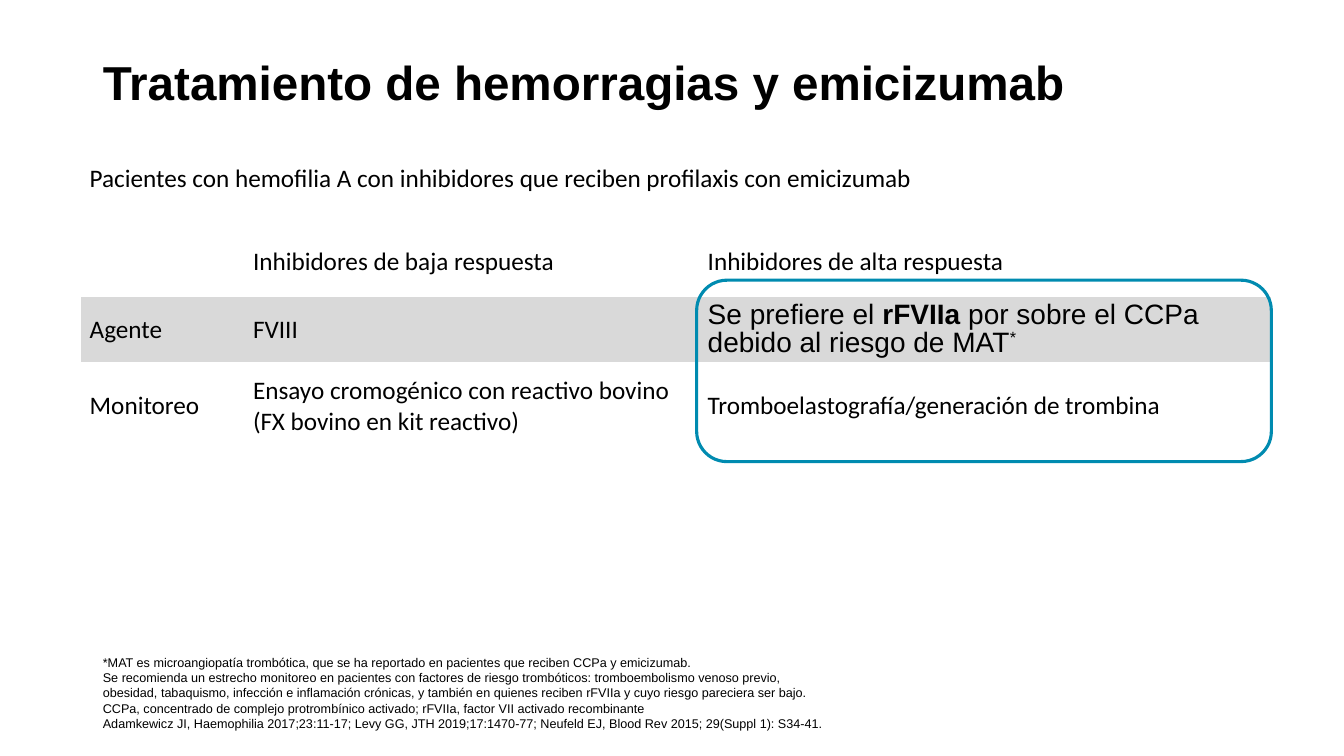
from lxml.etree import SubElement
from pptx import Presentation
from pptx.dml.color import RGBColor
from pptx.enum.shapes import MSO_SHAPE
from pptx.enum.text import MSO_ANCHOR, MSO_AUTO_SIZE, PP_ALIGN
from pptx.oxml.ns import qn
from pptx.util import Pt

PX = 9144
BLACK = RGBColor(0x00, 0x00, 0x00)
WHITE = RGBColor(0xFF, 0xFF, 0xFF)
GREY = RGBColor(0xD9, 0xD9, 0xD9)
TEAL = RGBColor(0x00, 0x8B, 0xB0)
PLAIN_GRID = "{2D5ABB26-0587-4C30-8999-92F81FD0307C}"

TITLE = "Tratamiento de hemorragias y emicizumab"
HEAD = "Pacientes con hemofilia A con inhibidores que reciben profilaxis con emicizumab"
AGENT = [
    ("Se prefiere el ", False, False),
    ("rFVIIa", True, False),
    (" por sobre el CCPa debido al riesgo de MAT", False, False),
    ("*", False, True),
]
ROWS = [
    (85, WHITE, [(HEAD, BLACK, True)]),
    (70, WHITE, [
        ("", BLACK, True),
        ("Inhibidores de baja respuesta", BLACK, True),
        ("Inhibidores de alta respuesta", BLACK, True),
    ]),
    (64, GREY, [
        ("Agente", TEAL, True),
        ("FVIII", BLACK, True),
        (AGENT, BLACK, False),
    ]),
    (88, WHITE, [
        ("Monitoreo", TEAL, True),
        ("Ensayo cromogénico con reactivo bovino (FX bovino en kit reactivo)", BLACK, False),
        ("Tromboelastografía/generación de trombina", BLACK, False),
    ]),
]
WIDTHS = [162, 451, 568]
NOTES = [
    "*MAT es microangiopatía trombótica, que se ha reportado en pacientes que reciben CCPa y emicizumab.",
    "Se recomienda un estrecho monitoreo en pacientes con factores de riesgo trombóticos: "
    "tromboembolismo venoso previo, obesidad, tabaquismo, infección e inflamación crónicas, "
    "y también en quienes reciben rFVIIa y cuyo riesgo pareciera ser bajo.",
    "CCPa, concentrado de complejo protrombínico activado; rFVIIa, factor VII activado recombinante",
    "Adamkewicz JI, Haemophilia 2017;23:11-17; Levy GG, JTH 2019;17:1470-77; "
    "Neufeld EJ, Blood Rev 2015; 29(Suppl 1): S34-41.",
]


def place(shape, *box):
    """Move and size a shape in px."""
    shape.left, shape.top, shape.width, shape.height = (n * PX for n in box)


def style(font, size, color=BLACK, bold=False):
    """Format one font."""
    font.name, font.size, font.bold = "Arial", Pt(size), bold
    font.color.rgb = color


def add_title(slide):
    """Fill the title placeholder."""
    title = slide.shapes.title
    place(title, 92, 25, 1150, 119)
    frame = title.text_frame
    frame.text = TITLE
    frame.auto_size = MSO_AUTO_SIZE.NONE
    frame.vertical_anchor = MSO_ANCHOR.MIDDLE
    line = frame.paragraphs[0]
    line.alignment, line.line_spacing = PP_ALIGN.LEFT, 0.9
    style(line.font, 34, bold=True)


def add_notes(slide):
    """Fill the body placeholder with the footnotes."""
    body = slide.placeholders[1]
    place(body, 92, 627, 741, 98)
    frame = body.text_frame
    frame.text = "\n".join(NOTES)
    frame.auto_size = MSO_AUTO_SIZE.NONE
    frame.vertical_anchor = MSO_ANCHOR.BOTTOM
    frame.margin_bottom = 0
    for line in frame.paragraphs:
        line.space_before = Pt(0)
        props = line._p.get_or_add_pPr()
        props.set("marL", "0")
        props.set("indent", "0")
        SubElement(props, qn("a:buNone"))
        style(line.font, 9)


def fill_cell(cell, text, color, bold, fill):
    """Write one table cell, from a string or a list of runs."""
    cell.fill.solid()
    cell.fill.fore_color.rgb = fill
    cell.vertical_anchor = MSO_ANCHOR.MIDDLE
    cell.margin_left = cell.margin_right = 9 * PX
    cell.margin_top = cell.margin_bottom = 3 * PX
    line = cell.text_frame.paragraphs[0]
    line.line_spacing = 0.9
    if isinstance(text, str):
        cell.text = text
        style(line.font, 20, color, bold)
        return
    for words, strong, raised in text:
        run = line.add_run()
        run.text = words
        style(run.font, 20, color, strong)
        if raised:
            run.font._element.set("baseline", "30000")


def add_grid(slide):
    """Add the treatment table."""
    high = sum(row[0] for row in ROWS)
    frame = slide.shapes.add_table(
        len(ROWS), len(WIDTHS), 80 * PX, 140 * PX, sum(WIDTHS) * PX, high * PX)
    table = frame.table
    table.first_row = table.horz_banding = False
    table._tbl.tblPr.find(qn("a:tableStyleId")).text = PLAIN_GRID
    for col, width in zip(table.columns, WIDTHS):
        col.width = width * PX
    for r, (height, fill, cells) in enumerate(ROWS):
        table.rows[r].height = height * PX
        for c, (text, color, bold) in enumerate(cells):
            fill_cell(table.cell(r, c), text, color, bold, fill)
    head = table.cell(0, 0)
    head.merge(table.cell(0, len(WIDTHS) - 1))
    head.vertical_anchor = MSO_ANCHOR.BOTTOM
    head.margin_top, head.margin_bottom = 0, 32 * PX


def add_frame(slide):
    """Outline the high-response column."""
    box = slide.shapes.add_shape(
        MSO_SHAPE.ROUNDED_RECTANGLE, 691 * PX, 278 * PX, 570 * PX, 180 * PX)
    box.shadow.inherit = False
    box.fill.background()
    box.line.color.rgb = TEAL
    box.line.width = Pt(2.25)


def main():
    """Build and save the slide."""
    deck = Presentation()
    deck.slide_width, deck.slide_height = 1333 * PX, 750 * PX
    slide = deck.slides.add_slide(deck.slide_layouts[1])
    add_title(slide)
    add_notes(slide)
    add_grid(slide)
    add_frame(slide)
    deck.save("out.pptx")


if __name__ == "__main__":
    main()
